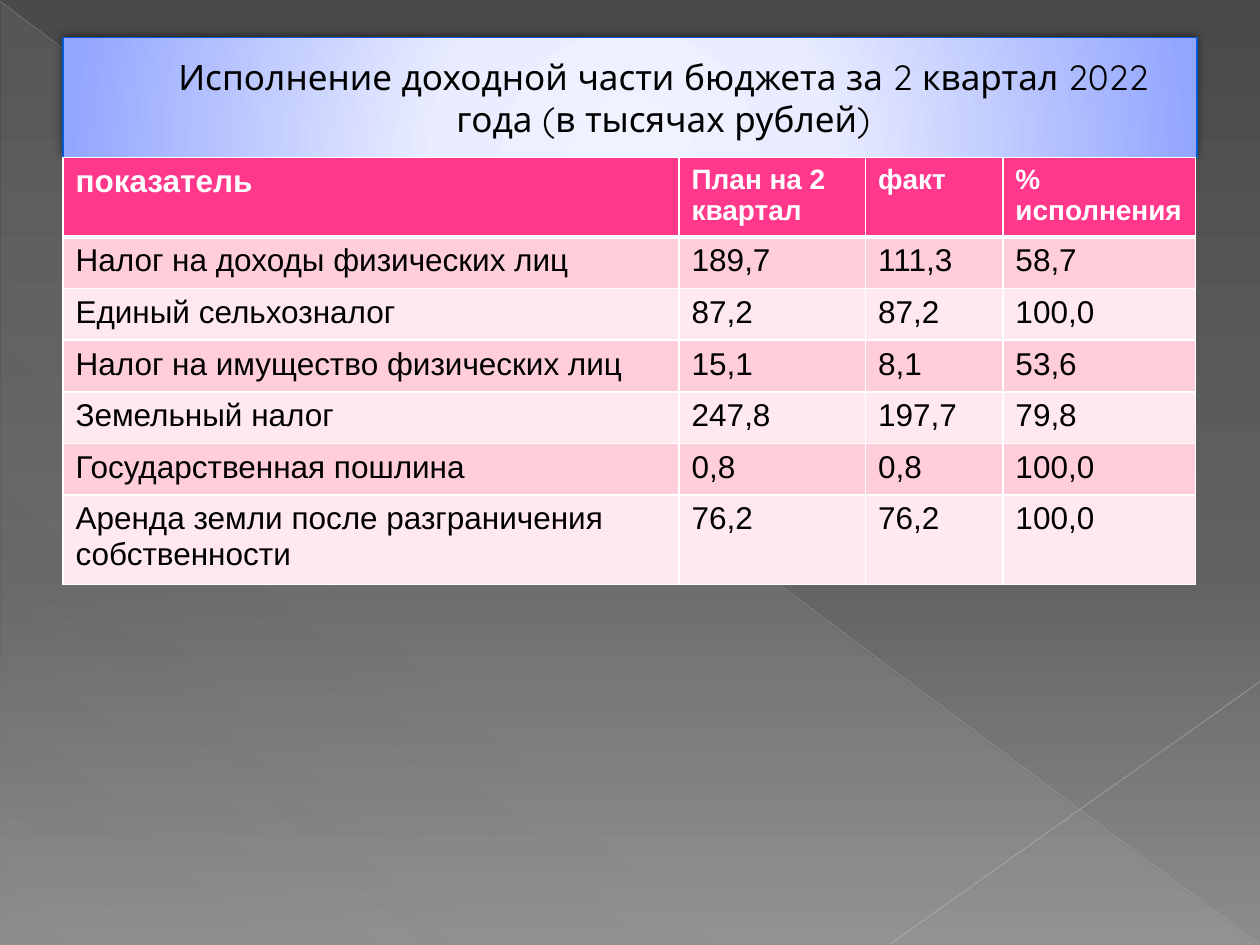
from lxml import etree
from pptx import Presentation
from pptx.dml.color import RGBColor
from pptx.enum.shapes import MSO_CONNECTOR, MSO_SHAPE
from pptx.enum.text import MSO_ANCHOR, MSO_AUTO_SIZE, PP_ALIGN
from pptx.oxml import parse_xml
from pptx.oxml.ns import nsdecls, qn
from pptx.util import Inches, Pt


def rgb(color):
    return RGBColor.from_string(color)


def set_gradient(parent, stops, direction):
    """Replace the solid fill of parent with a gradient of (position, colour, opacity)."""
    marks = "".join(
        f'<a:gs pos="{pos * 1000}"><a:srgbClr val="{color}">'
        f'<a:alpha val="{opacity * 1000}"/></a:srgbClr></a:gs>'
        for pos, color, opacity in stops)
    gradient = parse_xml(f'<a:gradFill {nsdecls("a")} rotWithShape="1">'
                         f'<a:gsLst>{marks}</a:gsLst>{direction}</a:gradFill>')
    parent.replace(parent.find(qn("a:solidFill")), gradient)


prs = Presentation()
prs.slide_width, prs.slide_height = Inches(10), Inches(7.5)
slide = prs.slides.add_slide(prs.slide_layouts[5])
shapes = slide.shapes

# Background
slide.background.fill.solid()
set_gradient(slide.element.find(".//" + qn("p:bgPr")),
             [(0, "4A4A4A", 100), (60, "626262", 100), (100, "8C8C8C", 100)],
             '<a:lin ang="5400000" scaled="0"/>')

# Translucent corner triangle
corner = shapes.add_shape(MSO_SHAPE.RIGHT_TRIANGLE, Inches(0.01), Inches(0.02),
                          Inches(9.98), Inches(7.48))
corner.shadow.inherit = False
corner.line.fill.background()
corner.fill.solid()
set_gradient(corner.element.spPr,
             [(0, "D2D2D2", 10), (70, "D2D2D2", 8), (100, "D2D2D2", 1)],
             f'<a:lin ang="{133 * 60000}" scaled="0"/>')

# Crossing diagonals
for x1, y1, x2, y2, color, width, opacity in [
        (0, 0.01, 9.99, 7.49, "BFBFBF", 0.39, 35),
        (10, 5.41, 7.07, 7.49, "C6C6C6", 0.47, 45)]:
    diagonal = shapes.add_connector(MSO_CONNECTOR.STRAIGHT, Inches(x1), Inches(y1),
                                    Inches(x2), Inches(y2))
    diagonal.line.color.rgb = rgb(color)
    diagonal.line.width = Pt(width)
    line_color = diagonal.element.spPr.find(".//" + qn("a:srgbClr"))
    etree.SubElement(line_color, qn("a:alpha"), val=str(opacity * 1000))
    etree.SubElement(diagonal.element.spPr, qn("a:effectLst"))

# Title band, in front of the decoration
title = shapes.title
title.element.getparent().append(title.element)
title.left, title.top = Inches(0.5), Inches(0.3)
title.width, title.height = Inches(9), Inches(0.95)
title.fill.solid()
set_gradient(title.element.spPr,
             [(0, "F0F2FF", 100), (34, "EAEDFF", 100), (100, "92A5FF", 100)],
             '<a:path path="circle">'
             '<a:fillToRect l="50000" t="155000" r="50000" b="-55000"/></a:path>')
title.line.color.rgb = rgb("005BD3")
title.line.width = Pt(0.75)
title.element.spPr.append(parse_xml(
    f'<a:effectLst {nsdecls("a")}><a:outerShdw blurRad="{Pt(5)}" dist="{Pt(2)}" '
    f'dir="{245 * 60000}" rotWithShape="0"><a:srgbClr val="000000">'
    '<a:alpha val="50000"/></a:srgbClr></a:outerShdw></a:effectLst>'))

heading = title.text_frame
heading.word_wrap = True
heading.auto_size = MSO_AUTO_SIZE.NONE
heading.vertical_anchor = MSO_ANCHOR.MIDDLE
heading_line = heading.paragraphs[0]
heading_line.alignment = PP_ALIGN.CENTER
indent = heading_line._p.get_or_add_pPr()
indent.set("marL", str(Inches(0.53)))
indent.set("indent", "0")
run = heading_line.add_run()
run.text = "Исполнение доходной части бюджета за 2 квартал 2022 года (в тысячах рублей)"
run.font.name = "Quicksand"
run.font.size = Pt(20)
run.font.color.rgb = rgb("000000")
run.font._element.insert(0, parse_xml(
    f'<a:ln {nsdecls("a")} w="{Pt(0.5)}"><a:solidFill><a:srgbClr val="B12761"/>'
    '</a:solidFill></a:ln>'))

# Budget revenue table
revenue = [
    ("показатель", "План на 2 квартал", "факт", "% исполнения"),
    ("Налог на доходы физических лиц", "189,7", "111,3", "58,7"),
    ("Единый сельхозналог", "87,2", "87,2", "100,0"),
    ("Налог на имущество физических лиц", "15,1", "8,1", "53,6"),
    ("Земельный налог", "247,8", "197,7", "79,8"),
    ("Государственная пошлина", "0,8", "0,8", "100,0"),
    ("Аренда земли после разграничения собственности", "76,2", "76,2", "100,0"),
]
column_widths = [4.89, 1.48, 1.09, 1.53]
row_heights = [0.63] + [0.41] * 5 + [0.71]
table = shapes.add_table(len(revenue), len(column_widths), Inches(0.5), Inches(1.25),
                         Inches(9), Inches(3.4)).table
for column, width in zip(table.columns, column_widths):
    column.width = Inches(width)
for row, height in zip(table.rows, row_heights):
    row.height = Inches(height)

for r, values in enumerate(revenue):
    header = r == 0
    row_fill = "FF388C" if header else ("FFE8EE", "FFCEDA")[r % 2]
    borders = {"lnL": 1, "lnR": 1, "lnT": 3 if r == 1 else 1, "lnB": 3 if header else 1}
    for c, value in enumerate(values):
        cell = table.cell(r, c)
        cell.fill.solid()
        cell.fill.fore_color.rgb = rgb(row_fill)
        run = cell.text_frame.paragraphs[0].add_run()
        run.text = value
        run.font.name = "Arial"
        run.font.size = Pt(16 if header and c else 18)
        run.font.bold = header
        run.font.color.rgb = rgb("FFFFFF" if header else "000000")
        for position, (side, width) in enumerate(borders.items()):
            cell._tc.get_or_add_tcPr().insert(position, parse_xml(
                f'<a:{side} {nsdecls("a")} w="{Pt(width)}"><a:solidFill>'
                f'<a:srgbClr val="FFFFFF"/></a:solidFill></a:{side}>'))

prs.save("out.pptx")
